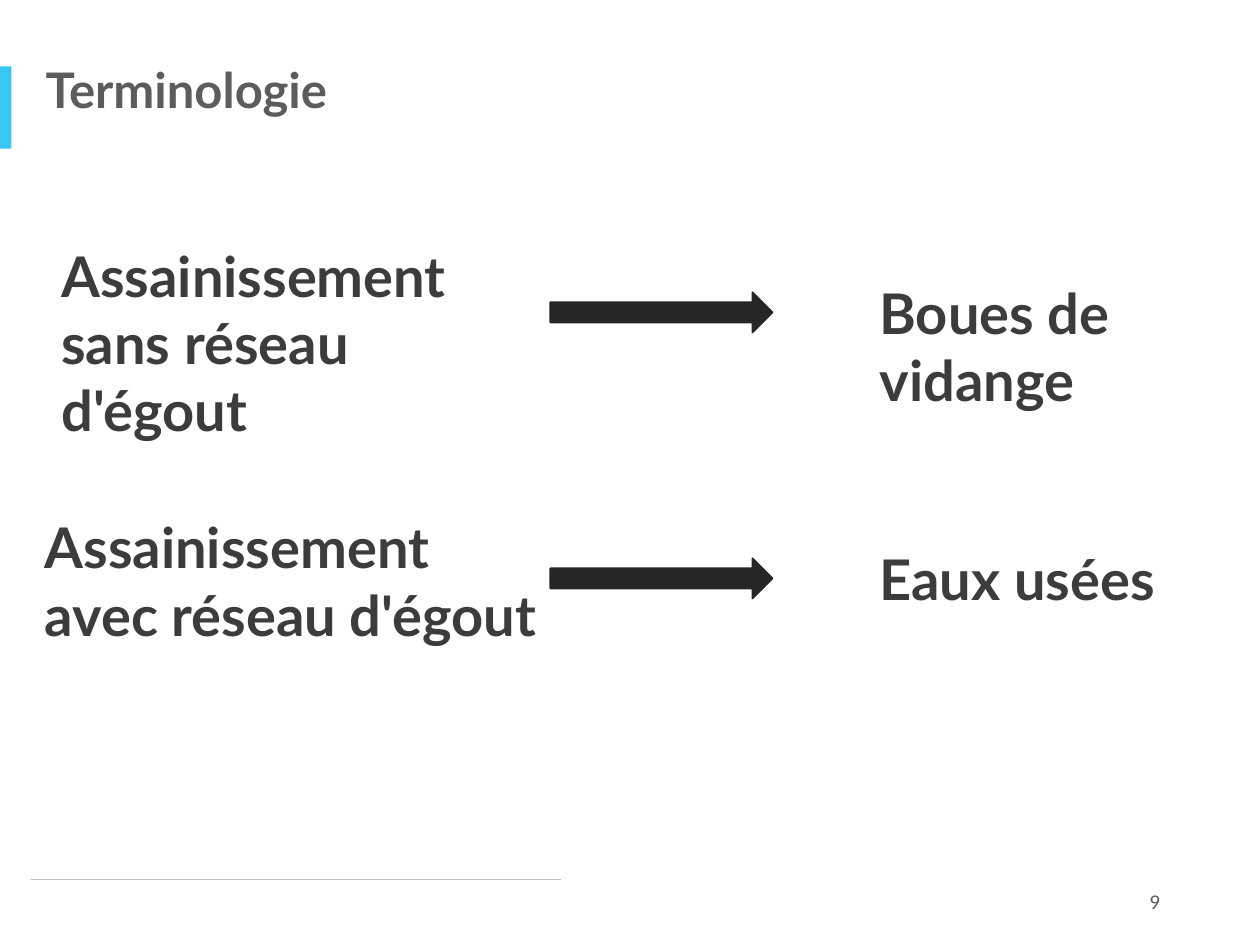
from pptx import Presentation
from pptx.dml.color import RGBColor
from pptx.enum.shapes import MSO_CONNECTOR, MSO_SHAPE
from pptx.enum.text import MSO_ANCHOR, PP_ALIGN
from pptx.oxml.ns import qn
from pptx.util import Pt
from lxml.etree import SubElement

COLORS = {
    "accent": "38C6F4",
    "rule": "BFBFBF",
    "title": "5C5C5C",
    "term": "3C3C3C",
    "arrow": "262626",
}


def color(name):
    return RGBColor.from_string(COLORS[name])


def add_text(slide, text, left, top, width, height, size=32, font="Lato",
             tint="term", bold=True, align=PP_ALIGN.LEFT,
             anchor=MSO_ANCHOR.TOP, spacing=1.0):
    box = slide.shapes.add_textbox(Pt(left), Pt(top), Pt(width), Pt(height))
    frame = box.text_frame
    frame.word_wrap = True
    frame.vertical_anchor = anchor
    para = frame.paragraphs[0]
    para.alignment = align
    para.line_spacing = spacing
    run = para.add_run()
    run.text = text
    run.font.name = font
    run.font.size = Pt(size)
    run.font.bold = bold
    run.font.color.rgb = color(tint)


def add_block(slide, kind, left, top, width, height, tint, line=None):
    block = slide.shapes.add_shape(
        kind, Pt(left), Pt(top), Pt(width), Pt(height))
    block.shadow.inherit = False
    block.fill.solid()
    block.fill.fore_color.rgb = color(tint)
    if line:
        block.line.color.rgb = color(tint)
        block.line.width = Pt(line)
    else:
        block.line.fill.background()


def add_rule(slide, left, right, y):
    rule = slide.shapes.add_connector(
        MSO_CONNECTOR.STRAIGHT, Pt(left), Pt(y), Pt(right), Pt(y))
    rule.line.color.rgb = color("rule")
    rule.line.width = Pt(1)
    SubElement(rule._element.spPr, qn("a:effectLst"))


def add_pair(slide, source, result, left, top, width, mid):
    add_text(slide, source, left, top, width, 124)
    add_block(slide, MSO_SHAPE.RIGHT_ARROW, 314.5, mid - 11.5, 127, 23,
              "arrow", line=1)
    add_text(slide, result, 495.5, mid - 23, 224.5, 46)


def main():
    deck = Presentation()
    deck.slide_width, deck.slide_height = Pt(720), Pt(540)
    slide = deck.slides.add_slide(deck.slide_layouts[6])
    add_block(slide, MSO_SHAPE.RECTANGLE, 0, 38, 6.5, 47, "accent")
    add_rule(slide, 17.5, 320.5, 502.5)
    add_text(slide, "Terminologie", 19, 34, 598, 32, size=28, tint="title",
             spacing=0.9)
    add_text(slide, "9", 508, 500.5, 162, 29, size=12, font="Calibri",
             tint="title", bold=False, align=PP_ALIGN.RIGHT,
             anchor=MSO_ANCHOR.MIDDLE)
    add_pair(slide, "Assainissement sans réseau d'égout", "Boues de vidange",
             28, 134.5, 248.5, 178.5)
    add_pair(slide, "Assainissement avec réseau d'égout", "Eaux usées",
             18.5, 289.5, 297, 330.5)
    deck.save("out.pptx")


if __name__ == "__main__":
    main()
